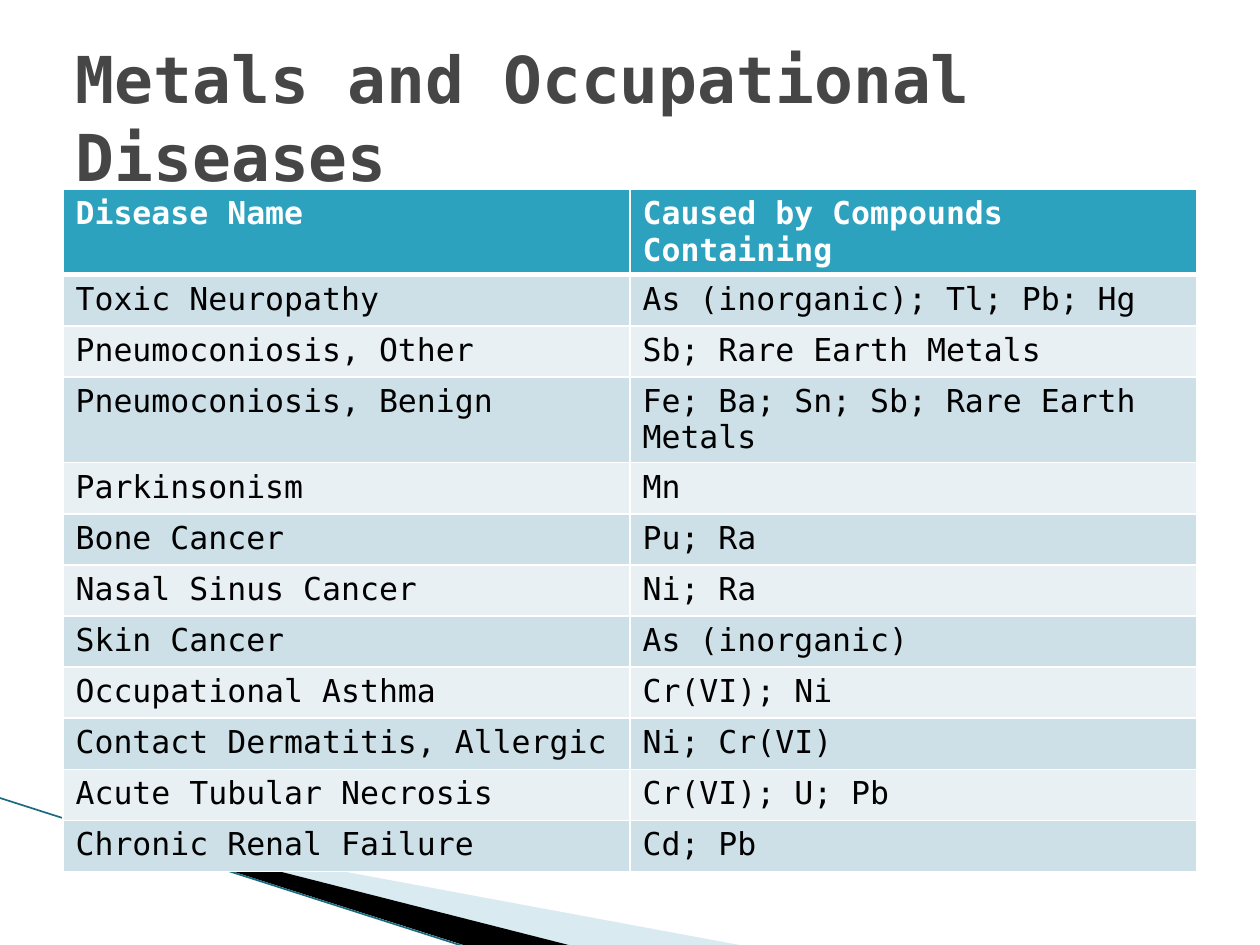
from dataclasses import dataclass
from typing import Optional

from lxml.etree import SubElement
from pptx import Presentation
from pptx.dml.color import RGBColor
from pptx.enum.shapes import MSO_CONNECTOR as Connector
from pptx.enum.text import MSO_ANCHOR as Anchor, MSO_AUTO_SIZE as AutoSize, PP_ALIGN as Align
from pptx.oxml.ns import qn
from pptx.util import Pt


@dataclass(frozen=True)
class Theme:
    font: str = "DejaVu Sans Mono"
    title_size: float = 36.9
    table_size: float = 18
    title: str = "464646"
    header: str = "2DA2BF"
    header_text: str = "FFFFFF"
    body_text: str = "000000"
    bands: tuple = ("CDE0E8", "E8F0F4")
    border: str = "FFFFFF"
    pale_wedge: str = "A0CBDC"
    dark_wedge: str = "000000"
    edge: str = "1A6B80"


@dataclass(frozen=True)
class Wedge:
    points: tuple
    color: str
    opacity: Optional[int] = None


@dataclass(frozen=True)
class Disease:
    name: str
    causes: str


THEME = Theme()

WEDGES = (
    Wedge(((39.6, 468.7), (428.4, 540.7), (328.3, 540.7), (39.6, 468)), THEME.pale_wedge, 40),
    Wedge(((38.2, 467.3), (329, 540.7), (267.8, 541.4), (38.9, 468)), THEME.dark_wedge),
)

HEADER = Disease("Disease Name", "Caused by Compounds Containing")
DISEASES = (
    Disease("Toxic Neuropathy", "As (inorganic); Tl; Pb; Hg"),
    Disease("Pneumoconiosis, Other", "Sb; Rare Earth Metals"),
    Disease("Pneumoconiosis, Benign", "Fe; Ba; Sn; Sb; Rare Earth Metals"),
    Disease("Parkinsonism", "Mn"),
    Disease("Bone Cancer", "Pu; Ra"),
    Disease("Nasal Sinus Cancer", "Ni; Ra"),
    Disease("Skin Cancer", "As (inorganic)"),
    Disease("Occupational Asthma", "Cr(VI); Ni"),
    Disease("Contact Dermatitis, Allergic", "Ni; Cr(VI)"),
    Disease("Acute Tubular Necrosis", "Cr(VI); U; Pb"),
    Disease("Chronic Renal Failure", "Cd; Pb"),
)


def apply(target, values: dict) -> None:
    for name, value in values.items():
        setattr(target, name, value)


def format_font(font, size: float, color: str, bold: bool) -> None:
    apply(font, {"name": THEME.font, "size": Pt(size), "bold": bold})
    font.color.rgb = RGBColor.from_string(color)


def paint(fill, color: str) -> None:
    fill.solid()
    fill.fore_color.rgb = RGBColor.from_string(color)


def draw_wedge(page, wedge: Wedge) -> None:
    start, *others = wedge.points
    builder = page.shapes.build_freeform(*start, scale=Pt(1))
    builder.add_line_segments(others, close=True)
    shape = builder.convert_to_shape()
    shape.shadow.inherit = False
    shape.line.fill.background()
    paint(shape.fill, wedge.color)
    if wedge.opacity is not None:
        color = shape.fill._xPr.find(".//" + qn("a:srgbClr"))
        SubElement(color, qn("a:alpha"), val=str(wedge.opacity * 1000))


def draw_edge(page) -> None:
    edge = page.shapes.add_connector(
        Connector.STRAIGHT, Pt(-0.7), Pt(455.8), Pt(267.1), Pt(541.4))
    edge.line.width = Pt(0.95)
    edge.line.color.rgb = RGBColor.from_string(THEME.edge)
    SubElement(edge._element.spPr, qn("a:effectLst"))


def draw_borders(cell, bottom: float) -> None:
    properties = cell._tc.get_or_add_tcPr()
    for side, width in {"L": 1, "R": 1, "T": 1, "B": bottom}.items():
        line = SubElement(properties, qn(f"a:ln{side}"), w=str(Pt(width)))
        SubElement(SubElement(line, qn("a:solidFill")), qn("a:srgbClr"), val=THEME.border)


def fill_row(cells, disease: Disease, fill: str, text: str, is_header: bool) -> None:
    for cell, words in zip(cells, (disease.name, disease.causes)):
        draw_borders(cell, 3 if is_header else 1)
        paint(cell.fill, fill)
        cell.text = words
        span = cell.text_frame.paragraphs[0].runs[0]
        format_font(span.font, THEME.table_size, text, is_header)


def draw_table(page) -> None:
    count = len(DISEASES) + 1
    table = page.shapes.add_table(count, 2, Pt(36), Pt(108), Pt(648), Pt(29.2 * count)).table
    fill_row(table.rows[0].cells, HEADER, THEME.header, THEME.header_text, True)
    for index, disease in enumerate(DISEASES):
        band = THEME.bands[index % 2]
        fill_row(table.rows[index + 1].cells, disease, band, THEME.body_text, False)


def draw_title(page) -> None:
    box = page.shapes.title
    apply(box, {"left": Pt(36), "top": Pt(21.6), "width": Pt(648), "height": Pt(90)})
    frame = box.text_frame
    apply(frame, {"text": "Metals and Occupational Diseases", "word_wrap": True,
                  "auto_size": AutoSize.NONE, "vertical_anchor": Anchor.MIDDLE})
    para = frame.paragraphs[0]
    para.alignment = Align.LEFT
    format_font(para.runs[0].font, THEME.title_size, THEME.title, True)
    page.shapes._spTree.append(box._element)


def main() -> None:
    deck = Presentation()
    apply(deck, {"slide_width": Pt(720), "slide_height": Pt(540)})
    page = deck.slides.add_slide(deck.slide_layouts.get_by_name("Title Only"))
    for wedge in WEDGES:
        draw_wedge(page, wedge)
    draw_edge(page)
    draw_table(page)
    draw_title(page)
    deck.save("out.pptx")


if __name__ == "__main__":
    main()
